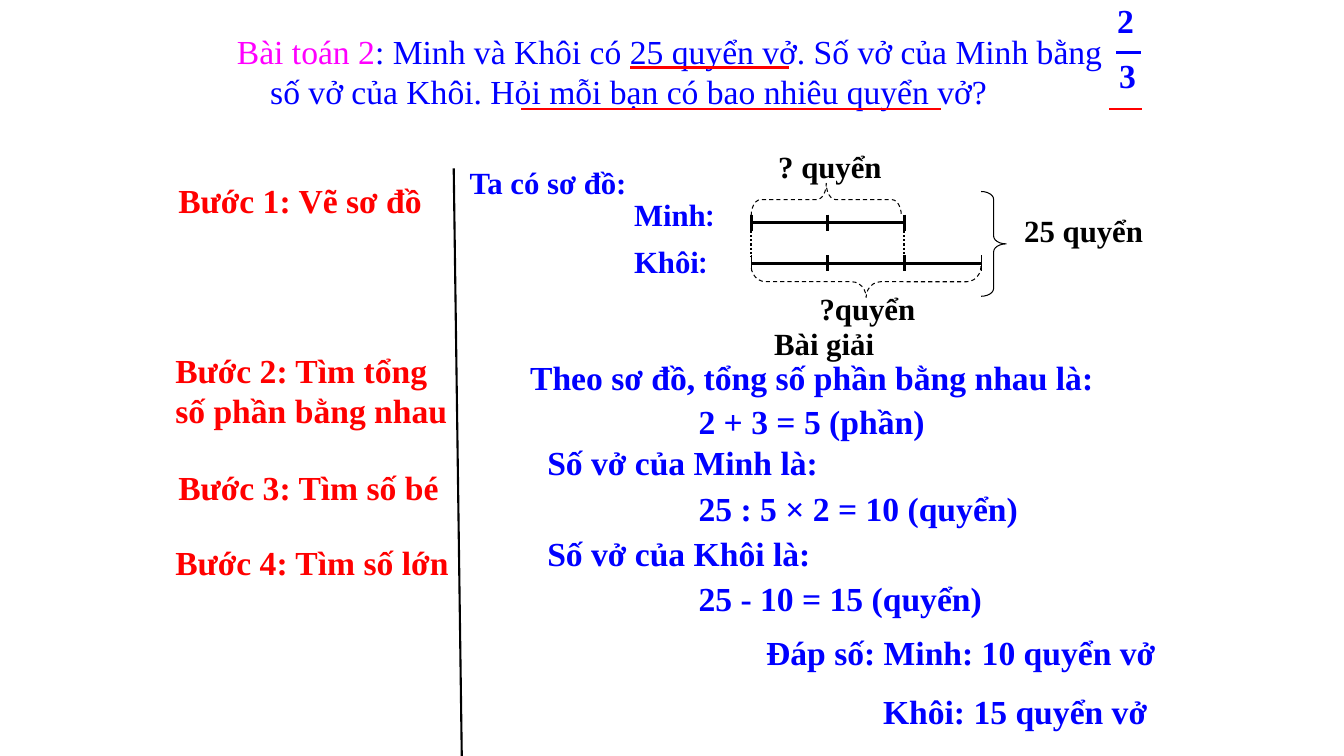
from dataclasses import dataclass
from lxml.etree import SubElement
from pptx import Presentation
from pptx.dml.color import RGBColor
from pptx.enum.dml import MSO_LINE
from pptx.enum.shapes import MSO_CONNECTOR, MSO_SHAPE
from pptx.enum.text import MSO_ANCHOR, PP_ALIGN
from pptx.oxml.ns import qn
from pptx.util import Inches, Pt


@dataclass(frozen=True)
class Theme:
    blue: str = "0000FF"
    red: str = "FF0000"
    pink: str = "FF00FF"
    black: str = "000000"
    font: str = "Times New Roman"
    colon: str = "Lato"
    big: int = 24
    small: int = 22


T = Theme()


def assign(item, values):
    for name, value in values.items():
        setattr(item, name, value)


def add_run(par, text, color, size=T.big, bold=True, font=T.font):
    run = par.add_run()
    run.text = text
    assign(run.font, {"name": font, "size": Pt(size), "bold": bold})
    run.font.color.rgb = RGBColor.from_string(color)


def indent(par, left, first=0):
    """Indent a paragraph; a negative first value hangs its first line."""
    props = par._p.get_or_add_pPr()
    props.set("marL", str(Inches(left)))
    props.set("indent", str(Inches(first)))


def label(slide, box, text, color, size=T.big, **frame):
    shape = slide.shapes.add_textbox(*map(Inches, box))
    assign(shape.text_frame, {"word_wrap": True, **frame})
    par = shape.text_frame.paragraphs[0]
    add_run(par, text, color, size)
    return par


def line(slide, start, end, color=T.black, width=1.5, dash=None):
    rule = slide.shapes.add_connector(
        MSO_CONNECTOR.STRAIGHT, *map(Inches, (*start, *end)))
    assign(rule.line, {"width": Pt(width), "dash_style": dash})
    rule.line.color.rgb = RGBColor.from_string(color)
    SubElement(rule._element.spPr, qn("a:effectLst"))


def brace(slide, box, curve, turn=0, dash=None):
    """Draw a right brace that fills box once it has been turned."""
    x, y, w, h = box
    if turn:
        x, y, w, h = x + (w - h) / 2, y + (h - w) / 2, h, w
    shape = slide.shapes.add_shape(
        MSO_SHAPE.RIGHT_BRACE, *map(Inches, (x, y, w, h)))
    shape.shadow.inherit = False
    shape.rotation = turn
    shape.adjustments[0] = curve
    shape.fill.background()
    assign(shape.line, {"width": Pt(0.75), "dash_style": dash})
    shape.line.color.rgb = RGBColor.from_string(T.black)


def problem(slide, box):
    x, y, w, h = box
    title = slide.shapes.title
    assign(title, dict(zip(("left", "top", "width", "height"),
                           map(Inches, box))))
    assign(title.text_frame, {"word_wrap": True,
                              "vertical_anchor": MSO_ANCHOR.MIDDLE})
    par = title.text_frame.paragraphs[0]
    par.alignment = PP_ALIGN.LEFT
    indent(par, 0.33, -0.33)
    add_run(par, "Bài toán 2", T.pink, bold=False)
    add_run(par, ": Minh và Khôi có 25 quyển vở. Số vở của Minh bằng "
            "số vở của Khôi. Hỏi mỗi bạn có bao nhiêu quyển vở?",
            T.blue, bold=False)
    for left, right, drop in ((4, 5.58, 0.42), (8.75, 9.08, 0.83),
                              (2.92, 7.08, 0.83)):
        line(slide, (x + left, y + drop), (x + right, y + drop), T.red)


def fraction(slide, box):
    x, y, w, h = box
    flat = dict.fromkeys(("margin_left", "margin_right",
                          "margin_top", "margin_bottom"), 0)
    line(slide, (x, y + 0.52), (x + w, y + 0.52), T.blue, 2.25)
    for digit, dx, dy in (("2", 0.01, 0), ("3", 0.03, 0.54)):
        label(slide, (x + dx, y + dy, 0.17, 0.4), digit, T.blue,
              **{**flat, "word_wrap": False})


def bar(slide, x, y, part, count, ends):
    """Draw a bar of equal parts, with end ticks of the given width."""
    line(slide, (x, y), (x + part * count, y), width=2.25)
    for i in range(count + 1):
        tick = x + i * part
        line(slide, (tick, y - 0.08), (tick, y + 0.08),
             width=ends if i in (0, count) else 2.25)


def diagram(slide, box):
    x, y, w, h = box
    part, left, minh, khoi = 0.76, x + 2.89, y + 0.79, y + 1.19
    for dx, dy, wide, text, color in (
            (0, 0.16, 2.44, "Ta có sơ đồ:", T.blue),
            (3.06, 0, 1.6, "? quyển", T.black),
            (3.47, 1.41, 1.69, "?quyển", T.black),
            (5.5, 0.63, 1.69, "25 quyển", T.black)):
        label(slide, (x + dx, y + dy, wide, 0.47), text, color, T.small)
    for name, dy in (("Minh", 0.4), ("Khôi", 0.87)):
        par = label(slide, (x + 1.63, y + dy, 1.3, 0.6), name, T.blue,
                    T.small, vertical_anchor=MSO_ANCHOR.MIDDLE)
        add_run(par, ":", T.blue, T.small, font=T.colon)
    bar(slide, left, minh, part, 2, 2.25)
    bar(slide, left, khoi, part, 3, 0.75)
    for edge in (left, left + 2 * part):
        line(slide, (edge, minh + 0.08), (edge, khoi - 0.06),
             dash=MSO_LINE.ROUND_DOT)
    brace(slide, (left, y + 0.4, 1.49, 0.32), 0.294, 270, MSO_LINE.DASH)
    brace(slide, (left, y + 1.22, 2.28, 0.31), 0.466, 90, MSO_LINE.DASH)
    brace(slide, (left + 3 * part, y + 0.48, 0.25, 1.04), 0.314)


def steps(slide, box):
    x, y, w, h = box
    for dx, dy, high, text in (
            (0.03, 0, 0.51, "Bước 1: Vẽ sơ đồ"),
            (0, 1.68, 0.91, "Bước 2: Tìm tổng số phần bằng nhau"),
            (0.03, 2.84, 0.51, "Bước 3: Tìm số bé"),
            (0, 3.59, 0.51, "Bước 4: Tìm số lớn")):
        label(slide, (x + dx, y + dy, w, high), text, T.red)


def answer(slide, box):
    x, y, w, h = box
    label(slide, (x + 2.42, y, 2, 0.47), "Bài giải", T.black, T.small)
    for dx, dy, text in (
            (0, 0.32, "Theo sơ đồ, tổng số phần bằng nhau là:"),
            (1.67, 0.76, "2 + 3 = 5 (phần)"),
            (0.17, 1.16, "Số vở của Minh là:"),
            (1.67, 1.62, "25 : 5 × 2 = 10 (quyển)"),
            (0.17, 2.07, "Số vở của Khôi là:"),
            (1.67, 2.51, "25 - 10 = 15 (quyển)")):
        label(slide, (x + dx, y + dy, w - dx, 0.51), text, T.blue)
    first = label(slide, (x + 2.34, y + 3.05, 4.5, 1.11),
                  "Đáp số: Minh: 10 quyển vở", T.blue)
    last = first._parent.add_paragraph()
    last.space_before = Pt(13)
    indent(last, 1.16)
    add_run(last, "Khôi: 15 quyển vở", T.blue)


def main():
    deck = Presentation()
    assign(deck, {"slide_width": Inches(13.33), "slide_height": Inches(7.5)})
    slide = deck.slides.add_slide(deck.slide_layouts[5])
    problem(slide, (2.25, 0.25, 9, 0.91))
    fraction(slide, (11.07, 0, 0.25, 0.94))
    diagram(slide, (4.56, 1.42, 7.19, 1.88))
    answer(slide, (5.16, 3.17, 6.84, 4.16))
    line(slide, (4.5, 1.67), (4.58, 7.5))
    steps(slide, (1.64, 1.74, 2.94, 4.1))
    deck.save("out.pptx")


if __name__ == "__main__":
    main()
